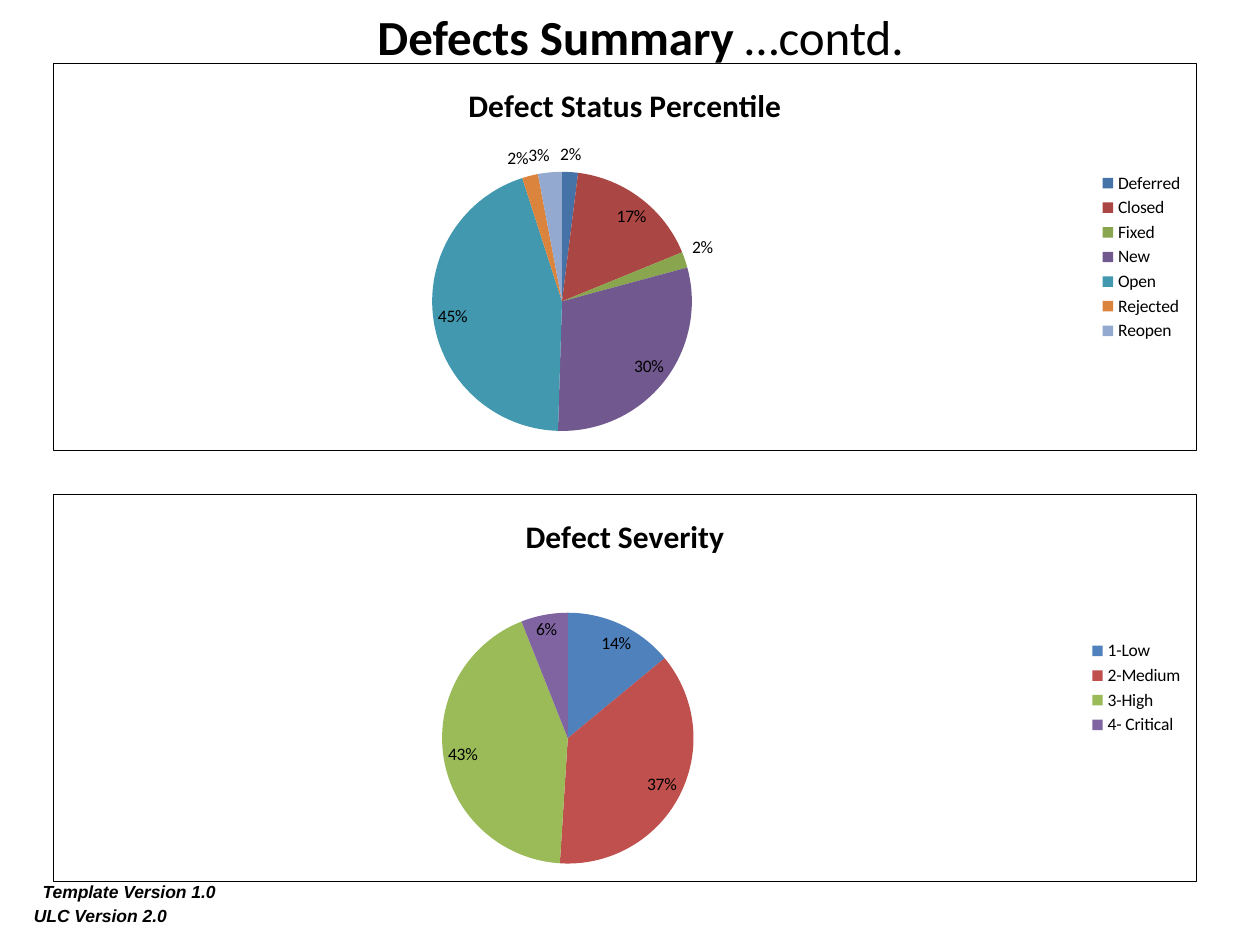
from dataclasses import dataclass

from lxml.etree import SubElement
from pptx import Presentation
from pptx.chart.data import CategoryChartData
from pptx.dml.color import RGBColor
from pptx.enum.chart import XL_CHART_TYPE, XL_LABEL_POSITION, XL_LEGEND_POSITION
from pptx.enum.text import PP_ALIGN
from pptx.oxml import parse_xml
from pptx.oxml.ns import nsdecls, qn
from pptx.util import Inches, Pt

BLACK = "000000"


@dataclass
class Slice:
    name: str
    percent: int
    color: str


@dataclass
class Pie:
    title: str
    top: float
    plot: dict[str, float]
    slices: list[Slice]


PIES = [
    Pie("Defect Status Percentile", 0.5, {"x": 0.33, "y": 0.28, "w": 0.23, "h": 0.67}, [
        Slice("Deferred", 2, "4572A7"),
        Slice("Closed", 17, "AA4643"),
        Slice("Fixed", 2, "89A54E"),
        Slice("New", 30, "71588F"),
        Slice("Open", 45, "4198AF"),
        Slice("Rejected", 2, "DB843D"),
        Slice("Reopen", 3, "93A9CF"),
    ]),
    Pie("Defect Severity", 3.92, {"x": 0.34, "y": 0.3, "w": 0.22, "h": 0.66}, [
        Slice("1-Low", 14, "4F81BD"),
        Slice("2-Medium", 37, "C0504D"),
        Slice("3-High", 43, "9BBB59"),
        Slice("4- Critical", 6, "8064A2"),
    ]),
]


def set_font(font, name: str, size: int, bold: bool = False, italic: bool = False) -> None:
    font.name, font.size, font.bold, font.italic = name, Pt(size), bold, italic
    font.color.rgb = RGBColor.from_string(BLACK)


def add_text_box(page, left: float, top: float, width: float, height: float):
    box = page.shapes.add_textbox(Inches(left), Inches(top), Inches(width), Inches(height))
    box.text_frame.word_wrap = True
    return box.text_frame


def place_plot(chart, plot: dict[str, float]) -> None:
    area = chart._chartSpace.chart.plotArea
    for old in area.findall(qn("c:layout")):
        area.remove(old)
    layout = parse_xml(f"<c:layout {nsdecls('c')}/>")
    manual = SubElement(layout, qn("c:manualLayout"))
    settings = {"layoutTarget": "inner", "xMode": "edge", "yMode": "edge", **plot}
    for tag, value in settings.items():
        SubElement(manual, qn(f"c:{tag}")).set("val", str(value))
    area.insert(0, layout)


def add_border(chart) -> None:
    chart._chartSpace.chart.addnext(parse_xml(
        f"<c:spPr {nsdecls('c', 'a')}><a:noFill/><a:ln w='{Pt(0.75)}'><a:solidFill>"
        f"<a:srgbClr val='{BLACK}'/></a:solidFill></a:ln></c:spPr>"
    ))


def add_pie(page, pie: Pie) -> None:
    data = CategoryChartData()
    data.categories = [part.name for part in pie.slices]
    data.add_series("Series 1", [part.percent for part in pie.slices])
    chart = page.shapes.add_chart(
        XL_CHART_TYPE.PIE, Inches(0.42), Inches(pie.top), Inches(9.08), Inches(3.08), data
    ).chart
    set_font(chart.font, "Calibri", 10)
    chart.has_title = True
    title = chart.chart_title.text_frame
    title.text = pie.title
    set_font(title.paragraphs[0].font, "Calibri", 18, bold=True)
    chart.has_legend = True
    chart.legend.position = XL_LEGEND_POSITION.RIGHT
    chart.legend.include_in_layout = False

    plot = chart.plots[0]
    plot.vary_by_categories = True
    plot.has_data_labels = True
    labels = plot.data_labels
    labels.show_percentage = True
    labels.show_value = False
    labels.number_format = "0%"
    labels.number_format_is_linked = False
    labels.position = XL_LABEL_POSITION.BEST_FIT
    for index, part in enumerate(pie.slices):
        fill = plot.series[0].points[index].format.fill
        fill.solid()
        fill.fore_color.rgb = RGBColor.from_string(part.color)
    place_plot(chart, pie.plot)
    add_border(chart)


def add_heading(page) -> None:
    para = add_text_box(page, 0.42, 0, 9.33, 0.42).paragraphs[0]
    para.alignment = PP_ALIGN.CENTER
    for text, bold in (("Defects Summary ", True), ("…contd.", False)):
        span = para.add_run()
        span.text = text
        set_font(span.font, "Calibri", 28, bold=bold)


def add_version_note(page) -> None:
    frame = add_text_box(page, 0.17, 6.83, 6.75, 0.57)
    lines = [[(" ", 18), ("Template Version 1.0", 10)], [("ULC Version 2.0", 10)]]
    for index, line in enumerate(lines):
        para = frame.add_paragraph() if index else frame.paragraphs[0]
        for text, size in line:
            span = para.add_run()
            span.text = text
            set_font(span.font, "Arial", size, bold=True, italic=True)


def main() -> None:
    deck = Presentation()
    deck.slide_width, deck.slide_height = Inches(10), Inches(7.5)
    page = deck.slides.add_slide(deck.slide_layouts[6])
    add_heading(page)
    for pie in PIES:
        add_pie(page, pie)
    add_version_note(page)
    deck.save("out.pptx")


if __name__ == "__main__":
    main()
